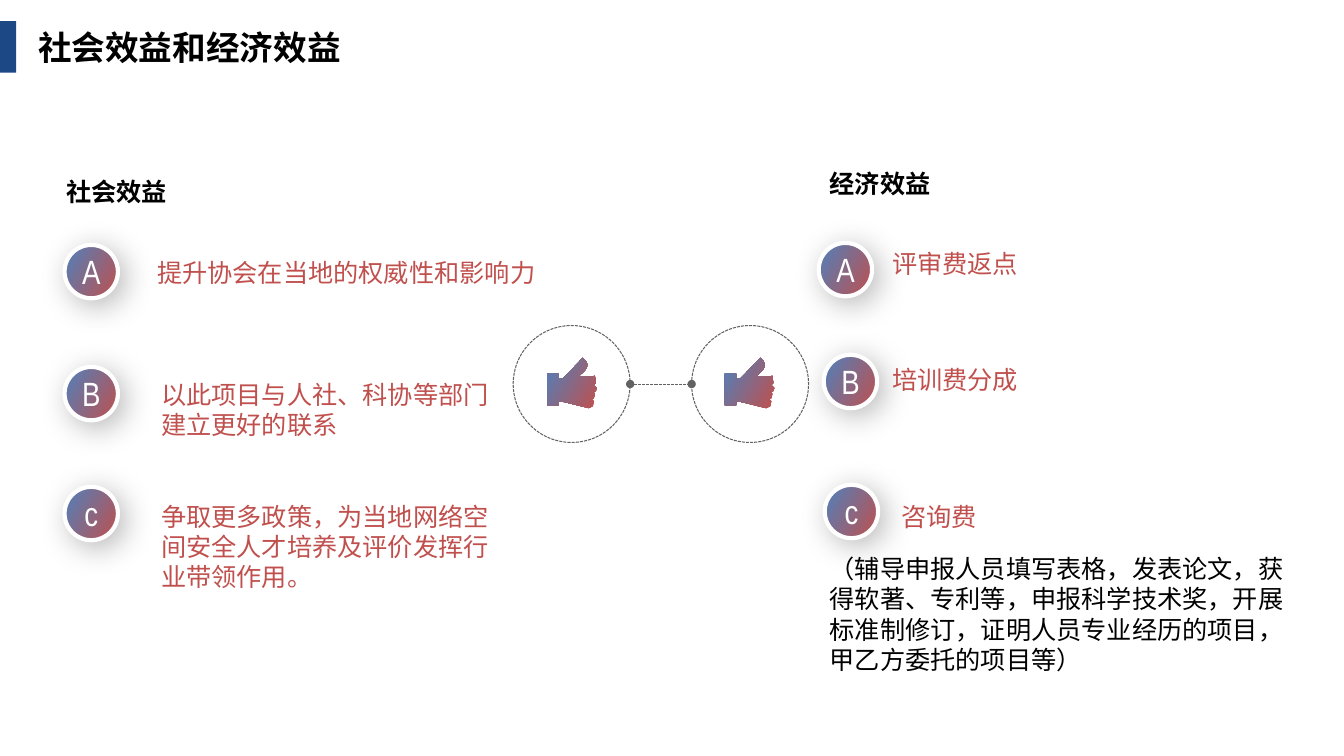
from dataclasses import dataclass
from typing import Optional

from lxml import etree
from pptx import Presentation
from pptx.dml.color import RGBColor
from pptx.dml.fill import FillFormat
from pptx.enum.dml import MSO_LINE
from pptx.enum.shapes import MSO_CONNECTOR, MSO_SHAPE
from pptx.enum.text import MSO_ANCHOR, MSO_AUTO_SIZE, PP_ALIGN
from pptx.oxml import parse_xml
from pptx.oxml.ns import nsdecls, qn
from pptx.util import Pt

# 100 px to the inch
EMU_PER_PX = 9144

ELLIPSE = MSO_SHAPE.OVAL
RECTANGLE = MSO_SHAPE.RECTANGLE
STRAIGHT = MSO_CONNECTOR.STRAIGHT
DASH = MSO_LINE.SQUARE_DOT
MIDDLE = MSO_ANCHOR.MIDDLE
CENTER = PP_ALIGN.CENTER
GROW = MSO_AUTO_SIZE.SHAPE_TO_FIT_TEXT

RED = RGBColor(0xC0, 0x50, 0x4D)
BLUE = RGBColor(0x4F, 0x81, 0xBD)
NAVY = RGBColor(0x1C, 0x48, 0x85)
GREY = RGBColor(0x62, 0x62, 0x62)
BLACK = RGBColor(0, 0, 0)
WHITE = RGBColor(0xFF, 0xFF, 0xFF)

CJK_FONT = "Noto Sans CJK SC"
LETTER_FONT = "Arial Narrow"
NOTE_FONT = "Calibri"

RING_TOP, RING_SIZE = 323, 116
RING_LEFTS = (509, 686)
THUMB_LEFTS = (543, 719)
THUMB_TOP = 355
BADGE_SIZE = 53
LETTER_WIDTH, LETTER_HEIGHT = 39, 50

# Thumb outline, relative to its top left corner
THUMB_HAND = [
    (47, 18), (48, 25), (46, 27), (49, 30), (48, 33), (46, 34), (47, 36),
    (46, 40), (44, 41), (46, 43), (45, 48), (41, 50), (17, 44), (11, 43),
    (11, 47), (0, 47), (0, 16), (11, 16), (11, 21), (16, 20), (35, 0),
]
THUMB_TIP = [(35, 0), (45, 8), (36, 14), (30, 19)]
TIP_STEPS = 8


@dataclass(frozen=True)
class Label:
    text: str
    left: int
    top: int
    width: int
    height: int
    color: Optional[RGBColor] = None  # None gives the red to blue gradient
    size: int = 18
    font: str = CJK_FONT
    bold: bool = False
    wrap: bool = False
    centered: bool = False


@dataclass(frozen=True)
class Badge:
    letter: str
    left: int
    top: int


LABELS = [
    Label("社会效益和经济效益", 28, 22, 481, 50, BLACK, size=24, bold=True, wrap=True),
    Label("社会效益", 56, 170, 121, 40, BLACK, bold=True),
    Label("提升协会在当地的权威性和影响力", 146, 250, 399, 40),
    Label("以此项目与人社、科协等部门建立更好的联系", 150, 371, 350, 71, wrap=True),
    Label("争取更多政策，为当地网络空间安全人才培养及评价发挥行业带领作用。",
          150, 492, 350, 101, wrap=True),
    Label("经济效益", 813, 162, 121, 40, BLACK, bold=True),
    Label("评审费返点", 875, 241, 146, 40),
    Label("培训费分成", 875, 357, 146, 40),
    Label("咨询费", 884, 492, 95, 40),
    Label("（辅导申报人员填写表格，发表论文，获得软著、专利等，申报科学技术奖，"
          "开展标准制修订，证明人员专业经历的项目，甲乙方委托的项目等）",
          813, 544, 471, 131, BLACK, font=NOTE_FONT, wrap=True),
]

BADGES = [
    Badge("A", 64, 243), Badge("B", 64, 364), Badge("c", 64, 483),
    Badge("A", 812, 241), Badge("B", 817, 352), Badge("c", 818, 481),
]


def px(*lengths: int) -> list[int]:
    return [length * EMU_PER_PX for length in lengths]


def set_gradient(fill: FillFormat, angle: int, start: float = 0) -> None:
    fill.gradient()
    fill.gradient_angle = angle
    for stop, color, position in zip(fill.gradient_stops, (RED, BLUE), (start, 1)):
        stop.color.rgb = color
        stop.position = position


def add_label(shapes, label: Label) -> None:
    box = shapes.add_textbox(*px(label.left, label.top, label.width, label.height))
    frame = box.text_frame
    frame.word_wrap = label.wrap
    frame.auto_size = GROW
    paragraph = frame.paragraphs[0]
    if label.centered:
        frame.vertical_anchor = MIDDLE
        paragraph.alignment = CENTER
    run = paragraph.add_run()
    run.text = label.text
    run.font.size = Pt(label.size)
    run.font.bold = label.bold
    run.font.name = label.font
    if label.color is None:
        set_gradient(run.font.fill, 315, 0.29)
    else:
        run.font.color.rgb = label.color
    if label.font == CJK_FONT:
        properties = run.font._element
        etree.SubElement(properties, qn("a:ea"), typeface=CJK_FONT)


def add_badge(shapes, badge: Badge) -> None:
    group = shapes.add_group_shape()
    disc = group.shapes.add_shape(
        ELLIPSE, *px(badge.left, badge.top, BADGE_SIZE, BADGE_SIZE))
    set_gradient(disc.fill, 150)
    disc.line.color.rgb = WHITE
    disc.line.width = Pt(3)
    disc._element.spPr.append(parse_xml(
        f'<a:effectLst {nsdecls("a")}>'
        f'<a:outerShdw blurRad="{Pt(22)}" dist="{Pt(6)}" dir="2700000" '
        'algn="tl" rotWithShape="0"><a:srgbClr val="000000">'
        '<a:alpha val="28000"/></a:srgbClr></a:outerShdw></a:effectLst>'))
    left = badge.left + (BADGE_SIZE - LETTER_WIDTH) // 2
    add_label(group.shapes, Label(badge.letter, left, badge.top + 1, LETTER_WIDTH,
                                  LETTER_HEIGHT, WHITE, 24, LETTER_FONT, centered=True))


def style_dashed(line) -> None:
    line.color.rgb = GREY
    line.width = Pt(0.75)
    line.dash_style = DASH


def add_ring(shapes, left: int) -> None:
    ring = shapes.add_shape(ELLIPSE, *px(left, RING_TOP, RING_SIZE, RING_SIZE))
    ring.shadow.inherit = False
    ring.fill.background()
    style_dashed(ring.line)


def add_ring_link(shapes) -> None:
    middle = RING_TOP + RING_SIZE // 2
    link = shapes.add_connector(
        STRAIGHT, *px(RING_LEFTS[0] + RING_SIZE, middle, RING_LEFTS[1], middle))
    style_dashed(link.line)
    properties = link._element.spPr
    outline = properties.find(qn("a:ln"))
    for end in ("a:headEnd", "a:tailEnd"):
        etree.SubElement(outline, qn(end), type="oval")
    etree.SubElement(properties, qn("a:effectLst"))


def thumb_tip_point(t: float) -> tuple[float, float]:
    weights = ((1 - t) ** 3, 3 * t * (1 - t) ** 2, 3 * t ** 2 * (1 - t), t ** 3)
    x, y = (sum(w * c for w, c in zip(weights, axis)) for axis in zip(*THUMB_TIP))
    return x, y


def add_thumb(shapes, left: int) -> None:
    tip = [thumb_tip_point(step / TIP_STEPS) for step in range(1, TIP_STEPS + 1)]
    points = [((left + x) * EMU_PER_PX, (THUMB_TOP + y) * EMU_PER_PX)
              for x, y in THUMB_HAND + tip]
    builder = shapes.build_freeform(*points[0])
    builder.add_line_segments(points[1:], close=True)
    thumb = builder.convert_to_shape()
    thumb.shadow.inherit = False
    set_gradient(thumb.fill, 150)
    thumb.line.fill.background()


def main() -> None:
    presentation = Presentation()
    presentation.slide_width, presentation.slide_height = px(1333, 750)
    slide = presentation.slides.add_slide(presentation.slide_layouts[6])
    shapes = slide.shapes

    # Linked rings with thumbs
    for ring_left in RING_LEFTS:
        add_ring(shapes, ring_left)
    add_ring_link(shapes)
    for thumb_left in THUMB_LEFTS:
        add_thumb(shapes, thumb_left)

    # Title bar
    title_bar = shapes.add_shape(RECTANGLE, *px(0, 21, 16, 51))
    title_bar.shadow.inherit = False
    title_bar.fill.solid()
    title_bar.fill.fore_color.rgb = NAVY
    title_bar.line.fill.background()

    # Lettered badges and texts
    for badge in BADGES:
        add_badge(shapes, badge)
    for label in LABELS:
        add_label(shapes, label)

    presentation.save("out.pptx")


if __name__ == "__main__":
    main()
